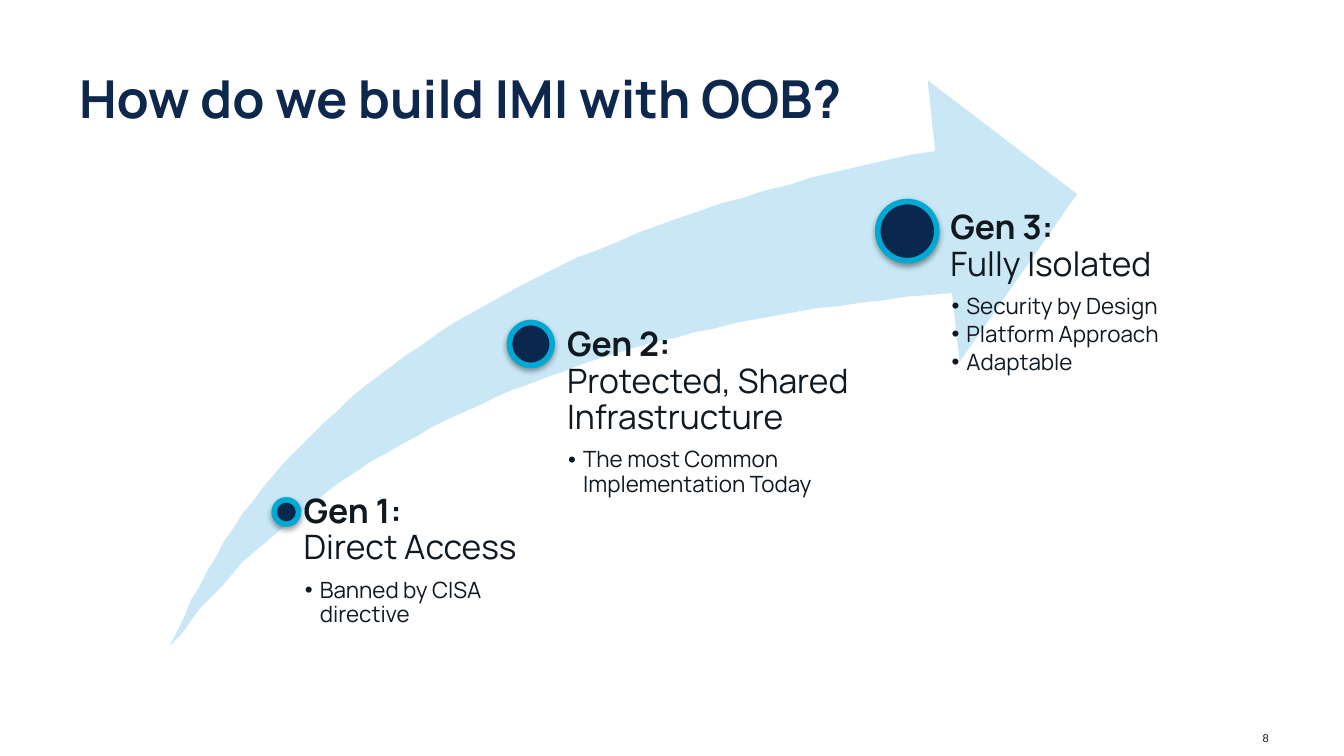
from dataclasses import dataclass

from lxml.etree import SubElement
from pptx import Presentation
from pptx.dml.color import RGBColor as RGB
from pptx.enum.shapes import MSO_SHAPE as Shape
from pptx.enum.text import MSO_ANCHOR as Anchor, PP_ALIGN as Align
from pptx.oxml.ns import qn
from pptx.util import Pt


@dataclass(frozen=True)
class Theme:
    title: str = "0D274D"
    text: str = "101820"
    arrow: str = "C9E7F5"
    dot: str = "0A274D"
    ring: str = "00A8D4"
    font: str = "Manrope"
    number_font: str = "Arial"
    title_size: float = 28
    heading_size: float = 18
    bullet_size: float = 12
    number_size: float = 6


def bezier(p0, p1, p2, p3, steps=48):
    """Points along a cubic curve, without its start."""
    points = []
    for i in range(1, steps + 1):
        t = i / steps
        u = 1 - t
        weights = (u**3, 3 * u * u * t, 3 * u * t * t, t**3)
        points.append(tuple(sum(w * c for w, c in zip(weights, axis))
                            for axis in zip(p0, p1, p2, p3)))
    return points


class Deck:
    def __init__(self, theme):
        self.theme = theme
        self.prs = Presentation()
        self.prs.slide_width, self.prs.slide_height = Pt(720), Pt(405)
        self.s = self.prs.slides.add_slide(self.prs.slide_layouts[6])

    def box(self, x, y, w, h, insets=(7.2, 3.6, 7.2, 3.6), anchor=Anchor.TOP):
        sp = self.s.shapes.add_textbox(Pt(x), Pt(y), Pt(w), Pt(h))
        tf = sp.text_frame
        tf.word_wrap = True
        tf.vertical_anchor = anchor
        tf.margin_left, tf.margin_top, tf.margin_right, tf.margin_bottom = map(Pt, insets)
        return tf

    def para(self, tf, text, size, bold=False, color=None, font=None, spacing=0.9):
        p = tf.paragraphs[0]
        if p.runs:
            p = tf.add_paragraph()
        p.line_spacing = spacing
        r = p.add_run()
        r.text = text
        r.font.size, r.font.bold = Pt(size), bold
        r.font.name = font or self.theme.font
        r.font.color.rgb = RGB.from_string(color or self.theme.text)
        return p

    def bullet(self, tf, text, before):
        p = self.para(tf, text, self.theme.bullet_size)
        p.level = 1
        p.space_before = Pt(before)
        pPr = p._p.get_or_add_pPr()
        pPr.set("marL", str(Pt(8.64)))
        pPr.set("indent", str(Pt(-8)))
        color = SubElement(pPr, qn("a:buClr"))
        SubElement(color, qn("a:srgbClr"), val=self.theme.text)
        SubElement(pPr, qn("a:buFont"), typeface="Arial")
        SubElement(pPr, qn("a:buChar"), char="•")

    def outline(self, points, color):
        builder = self.s.shapes.build_freeform(*points[0], scale=Pt(1))
        builder.add_line_segments(points[1:], close=True)
        sp = builder.convert_to_shape()
        sp.shadow.inherit = False
        sp.fill.solid()
        sp.fill.fore_color.rgb = RGB.from_string(color)
        sp.line.fill.background()

    def marker(self, x, y, size):
        sp = self.s.shapes.add_shape(Shape.OVAL, Pt(x), Pt(y), Pt(size), Pt(size))
        sp.fill.solid()
        sp.fill.fore_color.rgb = RGB.from_string(self.theme.dot)
        sp.line.color.rgb = RGB.from_string(self.theme.ring)
        sp.line.width = Pt(3)
        # Soft shadow straight below
        sp.shadow.inherit = False
        effects = sp._element.spPr.find(qn("a:effectLst"))
        shadow = SubElement(effects, qn("a:outerShdw"), blurRad=str(Pt(3.1)),
                            dist=str(Pt(1.6)), dir="5400000", rotWithShape="0")
        black = SubElement(shadow, qn("a:srgbClr"), val="000000")
        SubElement(black, qn("a:alpha"), val="38000")

    def stage(self, marker, area, inset, name, summary, bullets):
        self.marker(*marker)
        tf = self.box(*area, insets=(inset, 0, 0, 0))
        self.para(tf, name, self.theme.heading_size, bold=True)
        self.para(tf, summary, self.theme.heading_size)
        for i, text in enumerate(bullets):
            self.bullet(tf, text, 2.1 if i else 6.3)


STAGES = [
    ((146.9, 267.8, 13), (156.2, 265, 134, 88), 6.5,
     "Gen 1:", "Direct Access", ["Banned by CISA directive"]),
    ((272.9, 172.8, 23), (291.6, 175.7, 182.2, 165), 12.2,
     "Gen 2:", "Protected, Shared Infrastructure",
     ["The most Common Implementation Today"]),
    ((470.2, 108, 31.7), (492.5, 113, 159, 211), 16.6,
     "Gen 3:", "Fully Isolated",
     ["Security by Design", "Platform Approach", "Adaptable"]),
]


def main():
    theme = Theme()
    deck = Deck(theme)

    # Title
    tf = deck.box(35.3, 15.1, 650.2, 57.6, anchor=Anchor.BOTTOM)
    deck.para(tf, "How do we build IMI with OOB?", theme.title_size,
              bold=True, color=theme.title, spacing=0.8)

    # Slide number
    tf = deck.box(658.8, 384.5, 28, 21.6, anchor=Anchor.MIDDLE)
    p = deck.para(tf, "8", theme.number_size, font=theme.number_font, spacing=1)
    p.alignment = Align.RIGHT

    # Rising arrow: upper edge, head, lower edge
    tail, upper, lower = (91.4, 346.4), (501.1, 80.6), (509.8, 157)
    head = [(496.8, 43.2), (577, 103.7), (514.1, 194.4), lower]
    deck.outline([tail]
                 + bezier(tail, (145.4, 211.7), (281.5, 123.1), upper)
                 + head
                 + bezier(lower, (311.8, 173.5), (172.1, 236.9), tail)[:-1],
                 theme.arrow)

    # Generations along the arrow
    for stage in STAGES:
        deck.stage(*stage)

    deck.prs.save("out.pptx")


if __name__ == "__main__":
    main()
